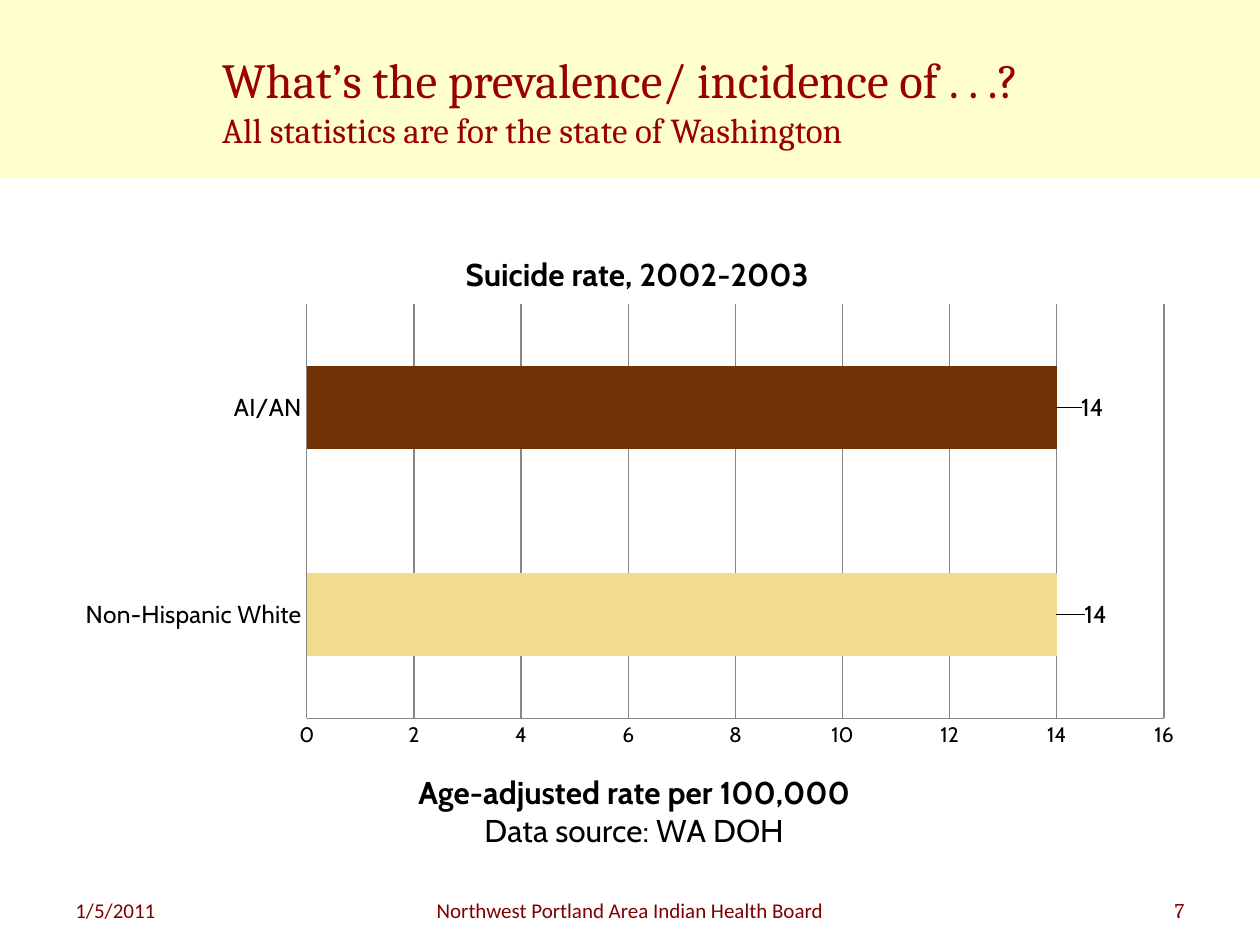
from lxml.etree import SubElement
from pptx import Presentation
from pptx.chart.data import CategoryChartData
from pptx.dml.color import RGBColor
from pptx.enum.chart import XL_CHART_TYPE as ChartType
from pptx.enum.chart import XL_LABEL_POSITION as LabelPosition
from pptx.enum.chart import XL_TICK_MARK as TickMark
from pptx.enum.shapes import MSO_SHAPE as Shape
from pptx.enum.text import MSO_ANCHOR as Anchor
from pptx.enum.text import PP_ALIGN as Align
from pptx.oxml.ns import qn
from pptx.util import Cm, Pt

THEME = {
    "band": "FFFFCC", "heading": "990000", "footer": "800000",
    "text": "000000", "line": "878787",
    "serif": "Cambria", "sans": "Calibri", "chart": "Cabin",
    "heading_size": 28, "subheading_size": 20, "footer_size": 12,
    "chart_title_size": 18, "label_size": 14, "tick_size": 12, "chart_size": 10,
}

HEADING = [
    ("What’s the prevalence/ incidence of . . .?", THEME["heading_size"]),
    ("All statistics are for the state of Washington", THEME["subheading_size"]),
]
CHART_TITLE = [("Suicide rate, 2002-2003", True)]
AXIS_TITLE = [("Age-adjusted rate per 100,000", True), ("Data source: WA DOH", False)]
# category, rate, bar colour, sideways shift of the label
BARS = [
    ("Non-Hispanic White", 14, "F1DB8C", 0.02),
    ("AI/AN", 14, "703204", 0.017),
]
# text, left, width, alignment, font
FOOTERS = [
    ("1/5/2011", 1.27, 5.93, Align.LEFT, THEME["sans"]),
    ("Northwest Portland Area Indian Health Board", 7.41, 10.58, Align.CENTER, THEME["sans"]),
    ("7", 18.2, 5.93, Align.RIGHT, THEME["serif"]),
]


def style_font(font, size, color, name, bold=False):
    font.size, font.name, font.bold = Pt(size), name, bold
    font.color.rgb = RGBColor.from_string(color)


def add_box(page, left, top, width, height, anchor=Anchor.TOP):
    frame = page.shapes.add_textbox(Cm(left), Cm(top), Cm(width), Cm(height)).text_frame
    frame.word_wrap = True
    frame.vertical_anchor = anchor
    return frame


def set_layout(parent, index, **values):
    """Place a chart part by fractions of the chart; index is its slot in parent."""
    for old in parent.findall(qn("c:layout")):
        parent.remove(old)
    layout = SubElement(parent, qn("c:layout"))
    parent.insert(index, layout)
    manual = SubElement(layout, qn("c:manualLayout"))
    for tag, value in values.items():
        SubElement(manual, qn(f"c:{tag}")).set("val", str(value))


def write_title(frame, lines):
    for number, (text, bold) in enumerate(lines):
        para = frame.add_paragraph() if number else frame.paragraphs[0]
        span = para.add_run()
        span.text = text
        style_font(span.font, THEME["chart_title_size"], THEME["text"], THEME["chart"], bold)


def style_axis(axis, size):
    axis.major_tick_mark = axis.minor_tick_mark = TickMark.NONE
    style_font(axis.tick_labels.font, size, THEME["text"], THEME["chart"])
    axis.format.line.color.rgb = RGBColor.from_string(THEME["line"])


def add_rate_chart(page):
    data = CategoryChartData()
    data.categories = [bar[0] for bar in BARS]
    data.add_series("Series 1", [bar[1] for bar in BARS])
    chart = page.shapes.add_chart(ChartType.BAR_CLUSTERED, Cm(1.27), Cm(4.45),
                                  Cm(22.86), Cm(13.13), data).chart
    style_font(chart.font, THEME["chart_size"], THEME["text"], THEME["chart"])
    chart.has_legend = False
    write_title(chart.chart_title.text_frame, CHART_TITLE)

    style_axis(chart.category_axis, THEME["label_size"])
    rates = chart.value_axis
    style_axis(rates, THEME["tick_size"])
    rates.minimum_scale, rates.maximum_scale, rates.major_unit = 0, 16, 2
    rates.has_major_gridlines = True
    rates.major_gridlines.format.line.color.rgb = RGBColor.from_string(THEME["line"])
    write_title(rates.axis_title.text_frame, AXIS_TITLE)

    plot = chart.plots[0]
    plot.gap_width = 150
    plot.vary_by_categories = False
    series = plot.series[0]
    for number, (_, _, color, _) in enumerate(BARS):
        point = series.points[number]
        point.format.fill.solid()
        point.format.fill.fore_color.rgb = RGBColor.from_string(color)
        point.data_label.position = LabelPosition.OUTSIDE_END
        style_font(point.data_label.font, THEME["label_size"], THEME["text"], THEME["chart"])

    root = chart.element if hasattr(chart, "element") else chart._chartSpace
    for label, bar in zip(root.iter(qn("c:dLbl")), BARS):
        set_layout(label, 1, x=bar[3], y=0)
    heading, axis_heading = root.iter(qn("c:title"))
    set_layout(heading, 1, xMode="edge", yMode="edge", x=0.35, y=0.04)
    set_layout(axis_heading, 1, xMode="edge", yMode="edge", x=0.31, y=0.84)
    set_layout(next(root.iter(qn("c:plotArea"))), 0, layoutTarget="inner", xMode="edge",
               yMode="edge", x=0.215, y=0.128, w=0.756, h=0.636)


def main():
    deck = Presentation()
    deck.slide_width, deck.slide_height = Cm(25.4), Cm(19.05)
    page = deck.slides.add_slide(deck.slide_layouts[6])

    band = page.shapes.add_shape(Shape.RECTANGLE, 0, 0, deck.slide_width, Cm(3.6))
    band.shadow.inherit = False
    band.fill.solid()
    band.fill.fore_color.rgb = RGBColor.from_string(THEME["band"])
    band.line.fill.background()

    for text, left, width, align, font in FOOTERS:
        para = add_box(page, left, 17.96, width, 1.09).paragraphs[0]
        para.alignment = align
        span = para.add_run()
        span.text = text
        style_font(span.font, THEME["footer_size"], THEME["footer"], font)

    add_rate_chart(page)

    para = add_box(page, 4.23, 0.43, 20.32, 3.18, Anchor.MIDDLE).paragraphs[0]
    for number, (text, size) in enumerate(HEADING):
        if number:
            para.add_line_break()
        span = para.add_run()
        span.text = text
        style_font(span.font, size, THEME["heading"], THEME["serif"])

    deck.save("out.pptx")


if __name__ == "__main__":
    main()
